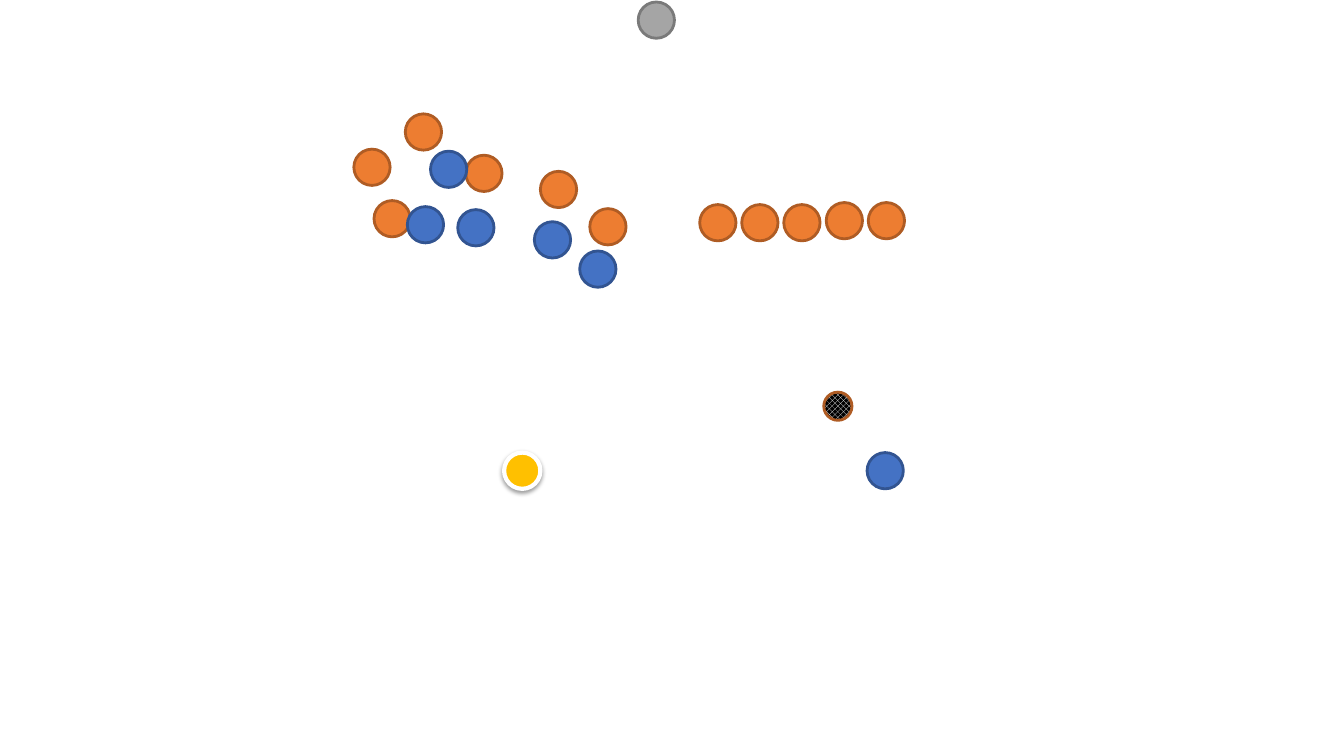
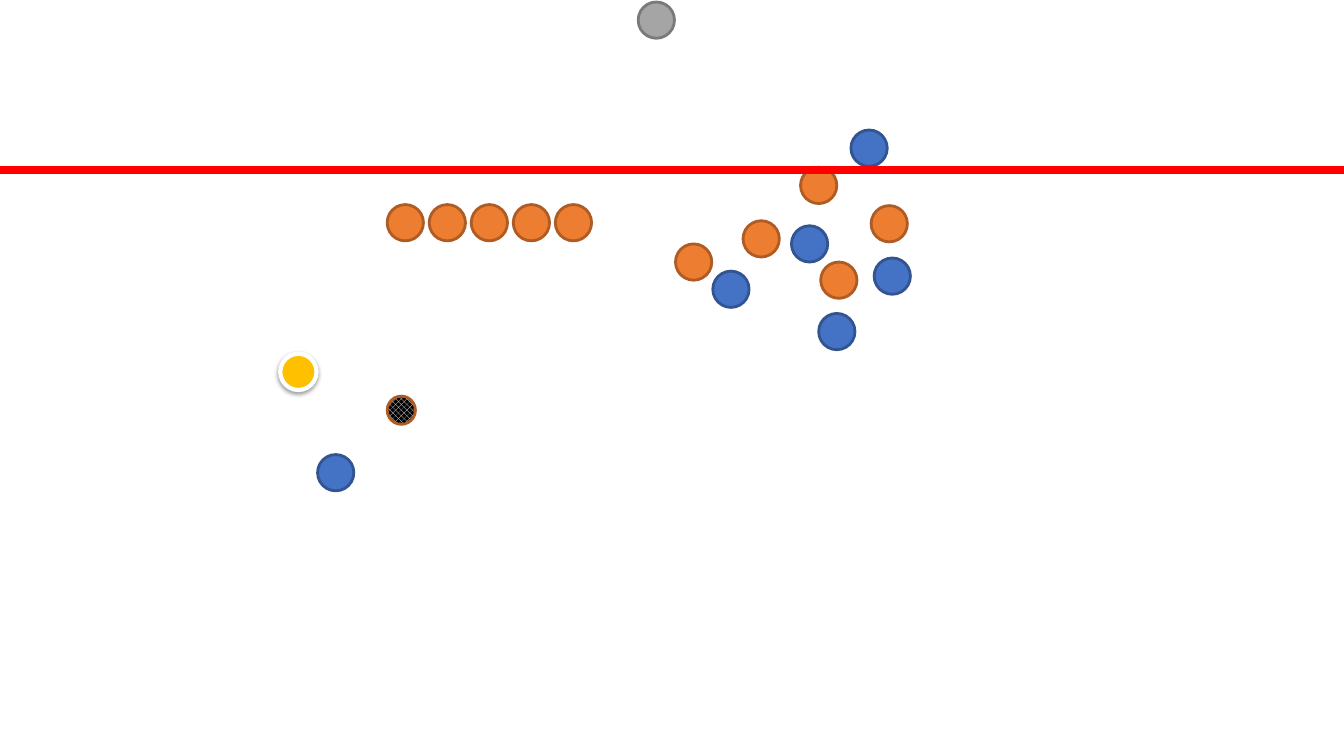
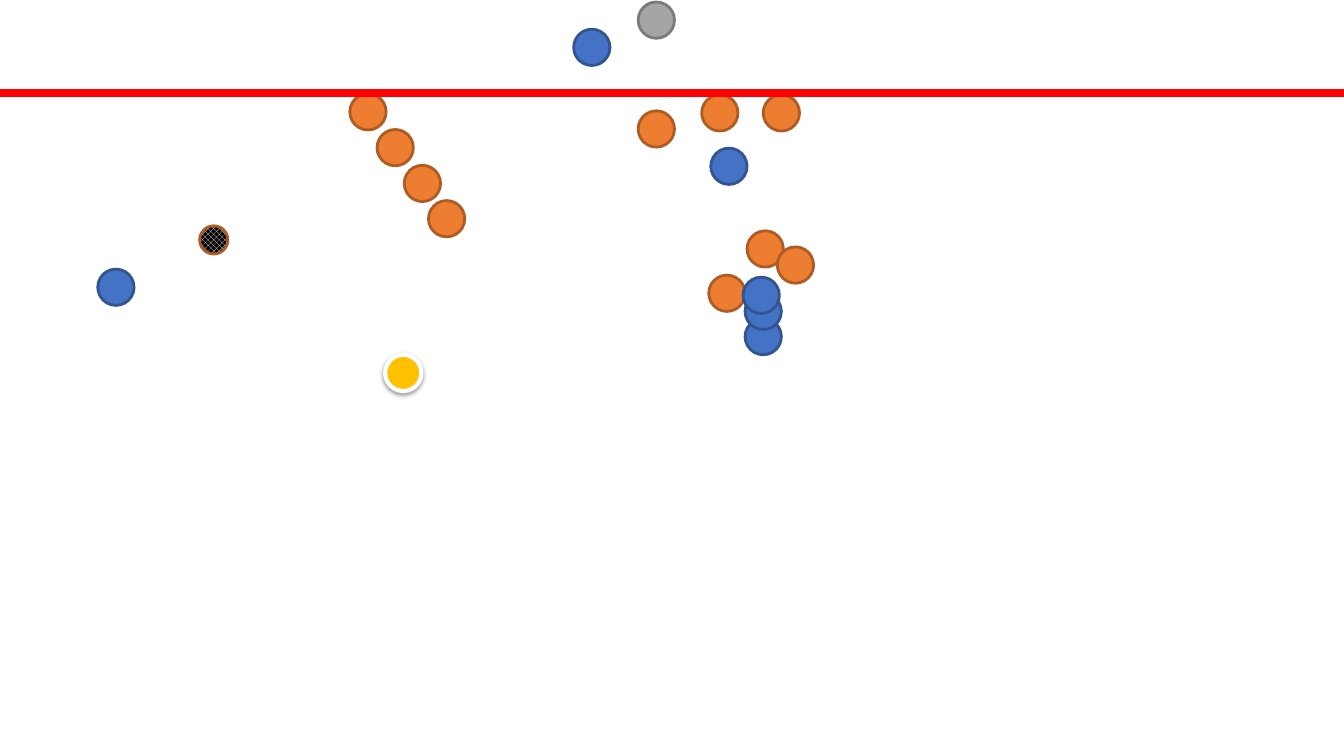
from lxml.etree import SubElement
from pptx import Presentation
from pptx.dml.color import RGBColor
from pptx.enum.dml import MSO_PATTERN
from pptx.enum.shapes import MSO_CONNECTOR, MSO_SHAPE
from pptx.oxml.ns import qn
from pptx.util import Inches, Pt

ORANGE = ("ED7D31", "AF5C24")
BLUE = ("4472C4", "325491")
GREY = ("A5A5A5", "7A7A7A")
YELLOW = ("FFC000", "FFFFFF")
RED = "FF0000"
CELL = Inches(0.1)
PLAYER_SIZE = 3.6
BALL_SIZE = 2.8
WALL_STEP = (4.17, 0)
KEEPER = (63.3, 0.2)


def color(value):
    return RGBColor.from_string(value)


def cells(count):
    return round(count * CELL)


class Pitch:
    """Draws set pieces on a pitch measured in columns and rows of 0.1 inch."""

    def __init__(self):
        self.deck = Presentation()
        self.deck.slide_width = Inches(13.33)
        self.deck.slide_height = Inches(7.5)
        self.slide = None

    def new_slide(self):
        self.slide = self.deck.slides.add_slide(self.deck.slide_layouts[6])

    def disc(self, place, size, outline, width=2):
        column, row = place
        disc = self.slide.shapes.add_shape(
            MSO_SHAPE.OVAL, cells(column), cells(row), cells(size), cells(size))
        disc.shadow.inherit = False
        disc.line.color.rgb = color(outline)
        disc.line.width = Pt(width)
        return disc

    def player(self, place, team, width=2):
        fill, outline = team
        player = self.disc(place, PLAYER_SIZE, outline, width)
        player.fill.solid()
        player.fill.fore_color.rgb = color(fill)
        return player

    def players(self, places, team):
        for place in places:
            self.player(place, team)

    def wall(self, start, count, step=WALL_STEP):
        column, row = start
        self.players([(column + i * step[0], row + i * step[1])
                      for i in range(count)], ORANGE)

    def referee(self, place):
        referee = self.player(place, YELLOW, 3)
        effects = referee._element.spPr.find(qn("a:effectLst"))
        shadow = SubElement(effects, qn("a:outerShdw"), blurRad=str(Pt(3.1)),
                            dist=str(Pt(1.6)), dir="5400000", rotWithShape="0")
        black = SubElement(shadow, qn("a:srgbClr"), val="000000")
        SubElement(black, qn("a:alpha"), val="38000")

    def ball(self, place):
        ball = self.disc(place, BALL_SIZE, ORANGE[1])
        ball.fill.patterned()
        ball.fill.pattern = MSO_PATTERN.OUTLINED_DIAMOND
        ball.fill.fore_color.rgb = color("FFFFFF")
        ball.fill.back_color.rgb = color("000000")

    def offside_line(self, row):
        line = self.slide.shapes.add_connector(
            MSO_CONNECTOR.STRAIGHT, cells(-1.8), cells(row), cells(135.3), cells(row))
        line.line.color.rgb = color(RED)
        line.line.width = Pt(5.5)
        SubElement(line._element.spPr, qn("a:effectLst"))

    def free_kick(self, walls, defenders, attackers, referee, ball, kicker, offside=None):
        self.new_slide()
        for wall in walls:
            self.wall(*wall)
        self.players(defenders, ORANGE)
        self.player(KEEPER, GREY)
        self.players(attackers, BLUE)
        self.referee(referee)
        self.ball(ball)
        self.player(kicker, BLUE)
        if offside is not None:
            self.offside_line(offside)


def main():
    pitch = Pitch()
    pitch.free_kick(
        walls=[((69.4, 20.3), 3), ((81.95, 20.1), 2)],
        defenders=[(46.2, 15.4), (37.1, 19.9), (53.6, 17), (40.2, 11.3),
                   (35.1, 14.8), (58.5, 20.7)],
        attackers=[(45.4, 20.8), (57.5, 24.9), (40.4, 20.5), (53, 22), (42.7, 15)],
        referee=(50, 44.9), ball=(81.7, 38.9), kicker=(86, 44.9))
    pitch.free_kick(
        walls=[((38.4, 20.3), 5)],
        defenders=[(81.4, 26), (73.7, 21.9), (86.4, 20.4), (79.4, 16.6), (67, 24.2)],
        attackers=[(84.4, 12.9), (81.2, 31.1), (70.7, 26.9), (86.7, 25.6), (78.5, 22.4)],
        referee=(27.8, 35.1), ball=(38.4, 39.3), kicker=(31.5, 45.1), offside=16.9)
    pitch.free_kick(
        walls=[((34.7, 9.3), 3, (2.7, 3.55))],
        defenders=[(42.5, 19.9), (75.7, 9.4), (69.6, 9.4), (70.3, 27.3),
                   (74.1, 22.9), (77.1, 24.5), (63.3, 11)],
        attackers=[(56.9, 2.9), (73.9, 31.6), (70.5, 14.7), (73.9, 29.1), (73.7, 27.5)],
        referee=(38.2, 35.2), ball=(19.8, 22.4), kicker=(9.7, 26.7), offside=9.2)
    pitch.deck.save("out.pptx")


if __name__ == "__main__":
    main()
